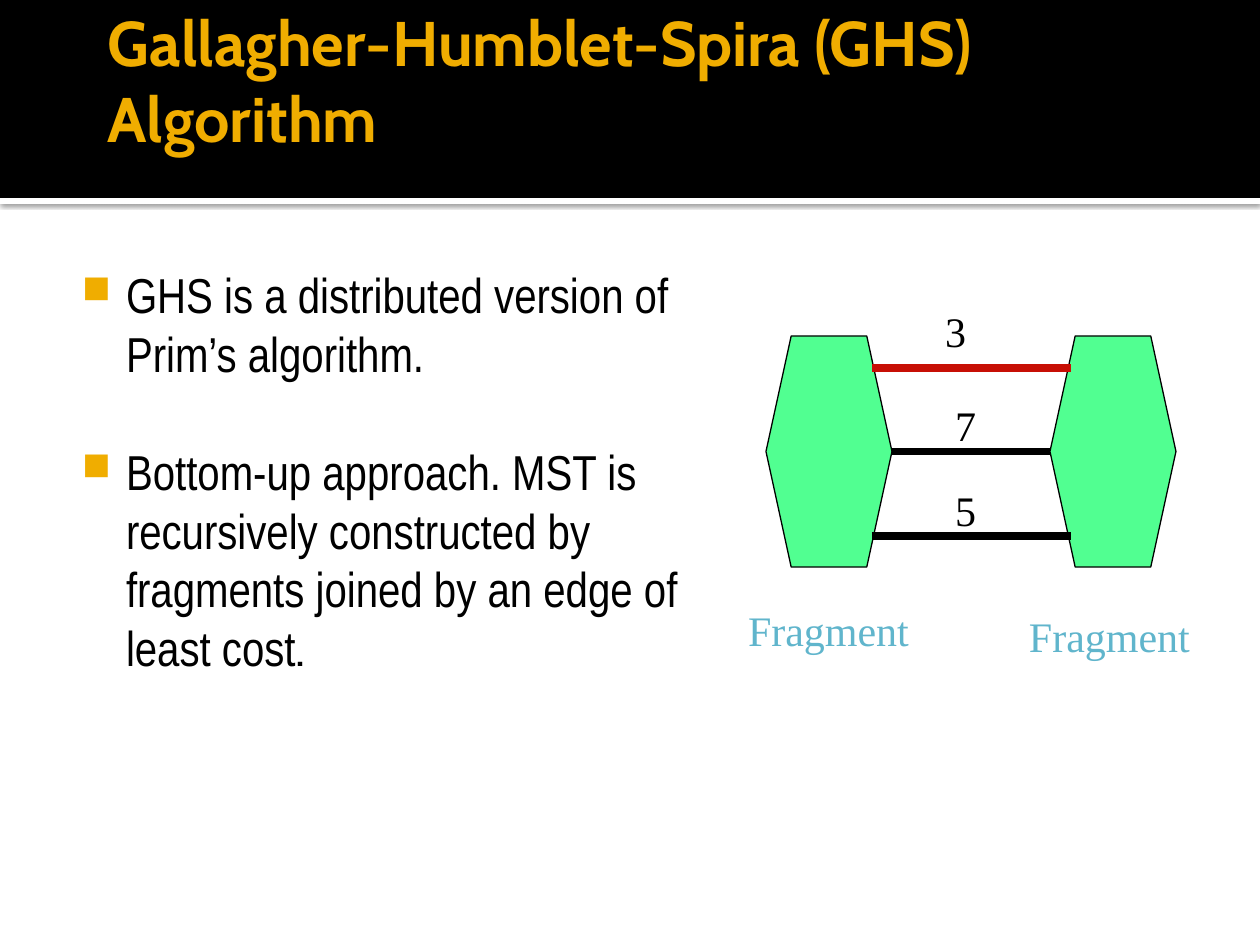
from dataclasses import dataclass

from lxml import etree
from pptx import Presentation
from pptx.dml.color import RGBColor
from pptx.enum.shapes import MSO_CONNECTOR, MSO_SHAPE
from pptx.enum.text import MSO_ANCHOR, MSO_AUTO_SIZE
from pptx.oxml import parse_xml
from pptx.oxml.ns import nsdecls, qn
from pptx.util import Pt

RECTANGLE = MSO_SHAPE.RECTANGLE
HEXAGON = MSO_SHAPE.FLOWCHART_PREPARATION
STRAIGHT = MSO_CONNECTOR.STRAIGHT
TOP, MIDDLE = MSO_ANCHOR.TOP, MSO_ANCHOR.MIDDLE
GROW = MSO_AUTO_SIZE.SHAPE_TO_FIT_TEXT
LEFT_SITE, RIGHT_SITE = 1, 3


@dataclass(frozen=True)
class Theme:
    black: str = "000000"
    white: str = "FFFFFF"
    gold: str = "F0AD00"
    green: str = "51FF91"
    red: str = "C70F05"
    blue: str = "60B5CC"
    title_font: str = "Cabin"
    body_font: str = "Arial Narrow"
    label_font: str = "Times New Roman"
    title_size: int = 36
    body_size: int = 28
    label_size: int = 24


THEME = Theme()
EMU_PER_PX = 914400 / 126
SLIDE_WIDTH, SLIDE_HEIGHT = 1260, 945

TITLE = "Gallagher-Humblet-Spira (GHS) Algorithm"
# Each bullet is a list of (text, font) spans.
BULLETS = [
    [("GHS is a distributed version of Prim’s algorithm.", THEME.body_font)],
    [("Bottom-up approach. MST is recursively constructed by fragments "
      "joined by an edge of least cost", THEME.body_font),
     (".", THEME.title_font)],
]
BULLET_GAP = 33.5  # points, one line of body text

FRAGMENT_LEFTS = (766, 1050)
FRAGMENT_TOP, FRAGMENT_WIDTH, FRAGMENT_HEIGHT = 336, 126, 231
EDGE_START, EDGE_END = 872, 1071
OUTER_EDGES = [(368, THEME.red), (536, THEME.black)]

# text, left, top, width, colour
LABELS = [
    ("3", 932, 300, 47, THEME.black),
    ("7", 942, 394, 47, THEME.black),
    ("5", 942, 479, 47, THEME.black),
    ("Fragment", 735, 599, 197, THEME.blue),
    ("Fragment", 1016, 605, 197, THEME.blue),
]
LABEL_HEIGHT = 63


def px(*lengths):
    return [round(length * EMU_PER_PX) for length in lengths]


def rgb(value):
    return RGBColor.from_string(value)


def add_filled(page, kind, frame, fill, outline=None):
    shape = page.shapes.add_shape(kind, *px(*frame))
    shape.shadow.inherit = False
    shape.fill.solid()
    shape.fill.fore_color.rgb = rgb(fill)
    if outline:
        shape.line.color.rgb = rgb(outline)
        shape.line.width = Pt(0.75)
    else:
        shape.line.fill.background()
    return shape


def add_drop_shadow(shape):
    effects = shape._element.spPr.find(qn("a:effectLst"))
    effects.append(parse_xml(
        f'<a:outerShdw {nsdecls("a")} blurRad="{Pt(2.5)}" dist="{Pt(0.8)}" '
        f'dir="5400000" algn="tl" rotWithShape="0">'
        f'<a:srgbClr val="{THEME.black}"><a:alpha val="60000"/></a:srgbClr>'
        f'</a:outerShdw>'))


def add_edge(page, start, end, y, color):
    edge = page.shapes.add_connector(STRAIGHT, *px(start, y, end, y))
    edge.line.color.rgb = rgb(color)
    edge.line.width = Pt(4.5)
    etree.SubElement(edge._element.spPr, qn("a:effectLst"))
    return edge


def add_text_frame(page, frame, margins, anchor=TOP, wrap=True):
    text = page.shapes.add_textbox(*px(*frame)).text_frame
    text.word_wrap = wrap
    text.vertical_anchor = anchor
    (text.margin_left, text.margin_top,
     text.margin_right, text.margin_bottom) = px(*margins)
    return text


def style(para, size, color, font=None, bold=None):
    para.font.size = Pt(size)
    para.font.color.rgb = rgb(color)
    para.font.name = font
    para.font.bold = bold


def add_square_bullet(para):
    properties = para._p.get_or_add_pPr()
    hanging, indent = px(44, 60)
    properties.set("marL", str(indent))
    properties.set("indent", str(-hanging))
    marks = [
        f'<a:buClr {nsdecls("a")}><a:srgbClr val="{THEME.gold}"/></a:buClr>',
        f'<a:buSzPct {nsdecls("a")} val="80000"/>',
        f'<a:buChar {nsdecls("a")} char="■"/>',
    ]
    # Bullet marks come before the default run properties.
    default_run = properties.find(qn("a:defRPr"))
    for mark in marks:
        default_run.addprevious(parse_xml(mark))


def add_header(page):
    strip = add_filled(page, RECTANGLE, (0, 198, SLIDE_WIDTH, 6), THEME.white)
    add_drop_shadow(strip)
    add_filled(page, RECTANGLE, (0, 0, SLIDE_WIDTH, 198), THEME.black)
    text = add_text_frame(page, (95, 0, 1071, 158), (13, 6, 6, 6), MIDDLE)
    para = text.paragraphs[0]
    para.text = TITLE
    style(para, THEME.title_size, THEME.gold, THEME.title_font, True)


def add_bullets(page):
    text = add_text_frame(page, (53, 252, 651, 567), (13, 13, 13, 6))
    for index, spans in enumerate(BULLETS):
        para = text.add_paragraph() if index else text.paragraphs[0]
        style(para, THEME.body_size, THEME.black)
        if index:
            para.space_before = Pt(BULLET_GAP)
        add_square_bullet(para)
        for words, font in spans:
            span = para.add_run()
            span.text = words
            span.font.name = font


def add_diagram(page):
    left, right = [
        add_filled(page, HEXAGON,
                   (x, FRAGMENT_TOP, FRAGMENT_WIDTH, FRAGMENT_HEIGHT),
                   THEME.green, THEME.black)
        for x in FRAGMENT_LEFTS]
    for y, color in OUTER_EDGES:
        add_edge(page, EDGE_START, EDGE_END, y, color)
    middle = add_edge(page, FRAGMENT_LEFTS[0] + FRAGMENT_WIDTH,
                      FRAGMENT_LEFTS[1], FRAGMENT_TOP + FRAGMENT_HEIGHT / 2,
                      THEME.black)
    middle.begin_connect(left, RIGHT_SITE)
    middle.end_connect(right, LEFT_SITE)

    for words, x, y, width, color in LABELS:
        text = add_text_frame(page, (x, y, width, LABEL_HEIGHT),
                              (13, 6, 13, 6), wrap=False)
        text.auto_size = GROW
        para = text.paragraphs[0]
        para.text = words
        style(para, THEME.label_size, color, THEME.label_font)


def main():
    deck = Presentation()
    deck.slide_width, deck.slide_height = px(SLIDE_WIDTH, SLIDE_HEIGHT)
    page = deck.slides.add_slide(deck.slide_layouts[6])
    add_header(page)
    add_bullets(page)
    add_diagram(page)
    deck.save("out.pptx")


if __name__ == "__main__":
    main()
